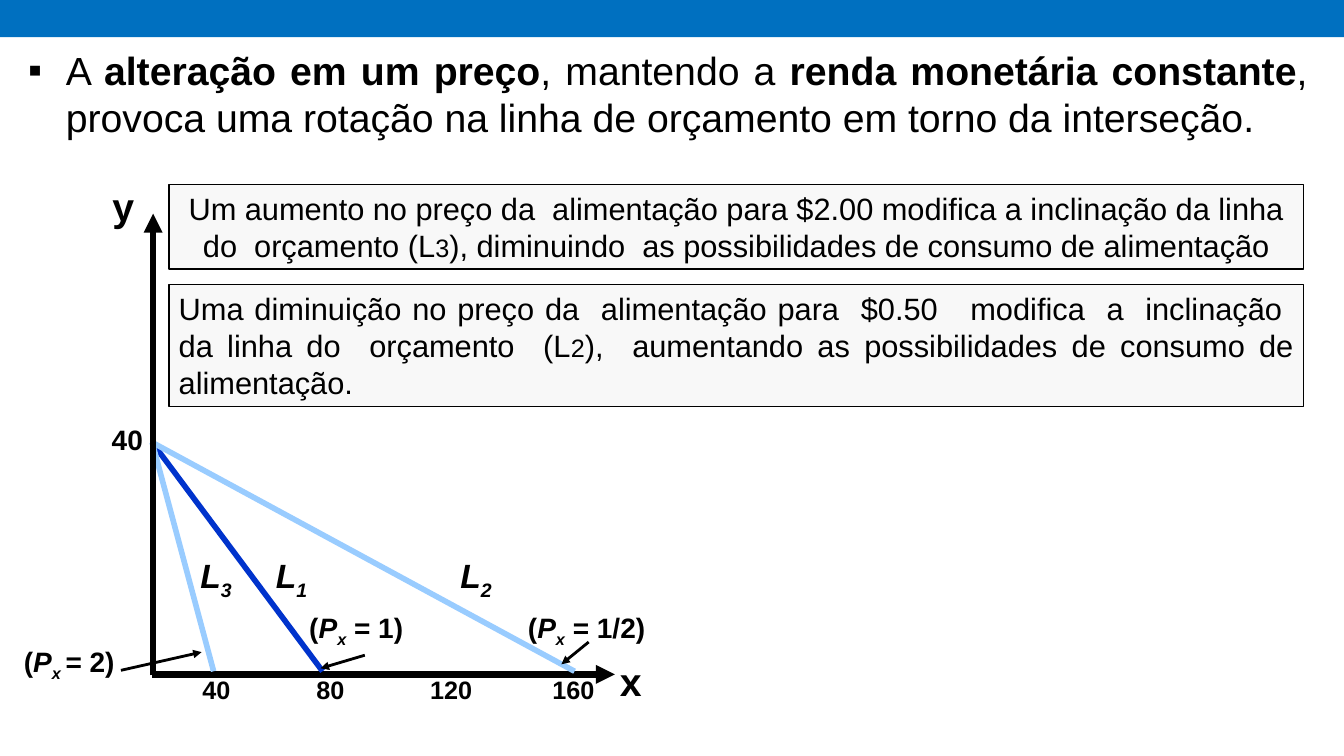
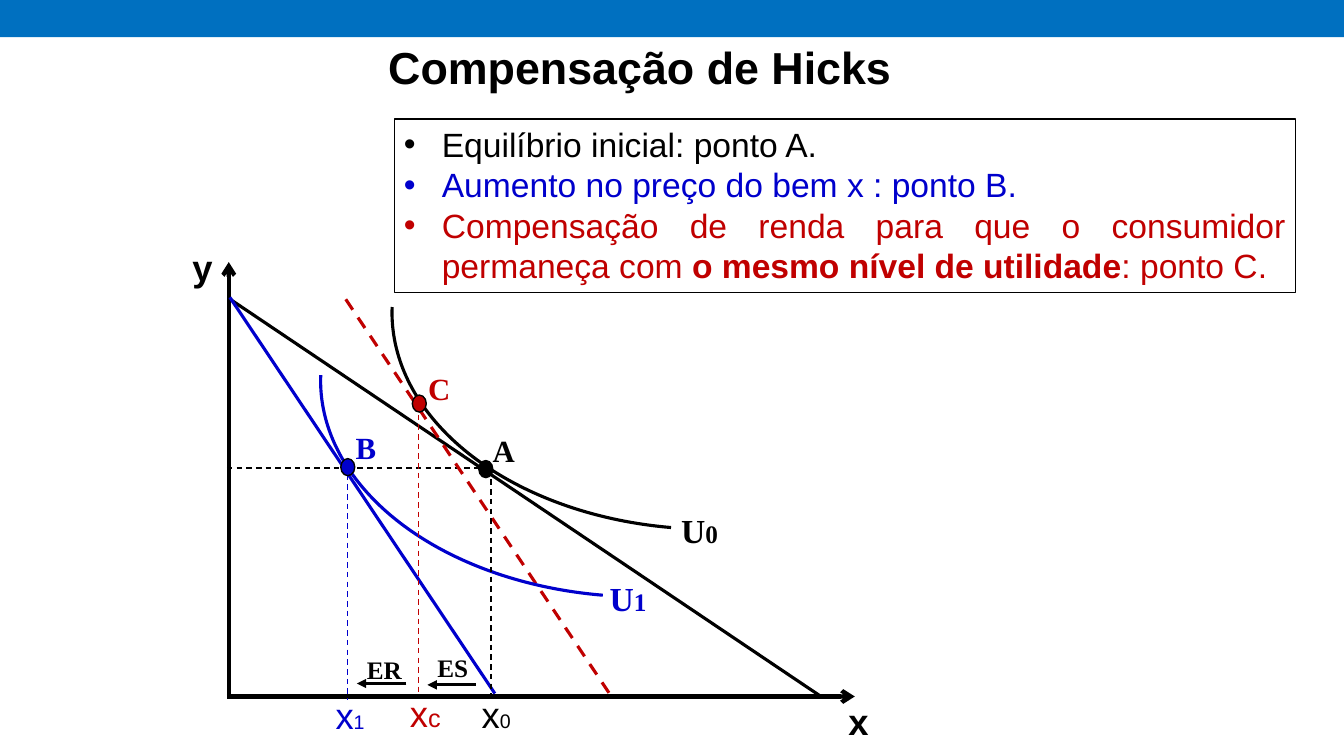
from pptx import Presentation
from pptx.dml.color import RGBColor
from pptx.enum.dml import MSO_LINE
from pptx.enum.shapes import MSO_CONNECTOR, MSO_SHAPE
from pptx.enum.text import MSO_ANCHOR, MSO_AUTO_SIZE, PP_ALIGN
from pptx.oxml.ns import qn
from pptx.util import Pt
from lxml.etree import SubElement


class Theme:
    black, band, panel = "000000", "0070C0", "F8F8F8"
    navy, sky, blue, red = "0033CC", "99CCFF", "0000CC", "C00000"
    sans, serif = "Arial", "Times New Roman"
    title, lead, axis, body, note, price, small, tiny = 32, 28, 26, 24, 22, 20, 18, 14


LEFT, CENTER, RIGHT, JUSTIFY = PP_ALIGN.LEFT, PP_ALIGN.CENTER, PP_ALIGN.RIGHT, PP_ALIGN.JUSTIFY
BOLD = {"bold": True}
SUB = {"italic": True, "baseline": -25000}
SMALL = {"size": Theme.small}

LEAD = ["A ", ("alteração em um preço", BOLD), ", mantendo a ",
        ("renda monetária constante", BOLD),
        ", provoca uma rotação na linha de orçamento em torno da interseção."]

NOTES = [
    (131.8, 60.5, CENTER,
     ["Um aumento no preço da  alimentação para $2.00 modifica a inclinação da linha do  orçamento (L",
      ("3", SMALL), "), diminuindo  as possibilidades de consumo de alimentação"]),
    (203.2, 87, JUSTIFY,
     ["Uma diminuição no preço da  alimentação para  $0.50   modifica  a  inclinação  da linha do  orçamento  (L",
      ("2", SMALL), "),  aumentando as possibilidades de consumo de alimentação."]),
]

BUDGET_LINES = [
    {"number": "1", "price": ["x", " = 1)"], "color": Theme.navy, "foot": 230.4, "name_left": 190,
     "price_box": (213.8, 432.7, 82.8, 31), "pointer": ((260.6, 468), (229, 477.4))},
    {"number": "3", "price": ["x ", "= 2)"], "color": Theme.sky, "foot": 152.6, "name_left": 136,
     "price_box": (10, 456.5, 81.4, 31), "pointer": ((86.4, 478.8), (144, 465.8))},
    {"number": "2", "price": ["x", " = 1/2)"], "color": Theme.sky, "foot": 410.4, "name_left": 321.8,
     "price_box": (370, 432.7, 99.4, 31), "pointer": ((420.5, 458.6), (401, 474.5))},
]
QUANTITIES = [("40", 137.5, 34.6), ("80", 218.9, 34.6), ("120", 300.2, 46), ("160", 387.4, 46)]
INTERCEPT = (108.7, 316)
FOOT_Y = 479.5

HICKS_TITLE = "Compensação de Hicks"
HICKS_STEPS = [
    (Theme.black, ["Equilíbrio inicial: ponto A."]),
    (Theme.blue, ["Aumento no preço do bem x : ponto B."]),
    (Theme.red, ["Compensação de renda para que o consumidor permaneça com ",
                 ("o mesmo nível de utilidade", BOLD), ": ponto C."]),
]
HICKS_BUDGETS = [
    ((163.4, 213.1), (587.5, 498.2), Theme.black, False),
    ((164.2, 212.4), (353.5, 495.4), Theme.blue, False),
    ((247, 213.8), (436.3, 496.8), Theme.red, True),
]
UTILITIES = [
    ("0", Theme.black, (280, 68.4, 455, 309.6), (479.5, 360.7)),
    ("1", Theme.blue, (229, 117.4, 459.4, 308.9), (428.4, 409)),
]
EQUILIBRIA = [
    {"name": "A", "color": Theme.black, "dot": (342, 329), "name_at": (344.9, 304.6),
     "drop": (350.6, 335.5, 495.4), "sub": "0", "sub_size": Theme.tiny, "x_at": (337, 491)},
    {"name": "B", "color": Theme.blue, "dot": (243.4, 327.6), "name_at": (247, 302.4),
     "drop": (248.4, 339, 499.7), "sub": "1", "sub_size": Theme.tiny, "x_at": (232.6, 491.8)},
    {"name": "C", "color": Theme.red, "dot": (294.5, 282.2), "name_at": (298.8, 260.6),
     "drop": (298.8, 282.2, 495.4), "sub": "c", "sub_size": Theme.small, "x_at": (285.8, 490.3)},
]
EFFECTS = [("ES", (305.3, 462.2), (339.8, 305.3), 489.2), ("ER", (254.9, 463.7), (290.2, 254.9), 488.2)]
INITIAL_Y = 334.3


def rgb(color):
    return RGBColor.from_string(color)


def style_run(run, style):
    values = dict(style)
    run.font.color.rgb = rgb(values.pop("color", Theme.black))
    baseline = values.pop("baseline", None)
    if baseline:
        run._r.get_or_add_rPr().set("baseline", str(baseline))
    values["size"] = Pt(values["size"])
    for key, value in values.items():
        setattr(run.font, key, value)


def add_bullet(paragraph, char, color, percent):
    pPr = paragraph._p.get_or_add_pPr()
    pPr.set("marL", str(Pt(27)))
    pPr.set("indent", str(-Pt(27)))
    SubElement(SubElement(pPr, qn("a:buClr")), qn("a:srgbClr")).set("val", color)
    SubElement(pPr, qn("a:buSzPct")).set("val", str(percent * 1000))
    SubElement(pPr, qn("a:buFont")).set("typeface", Theme.sans)
    SubElement(pPr, qn("a:buChar")).set("char", char)


def write(shape, paragraphs, size, font=Theme.sans, align=LEFT, wrap=True, grow=True,
          anchor=MSO_ANCHOR.TOP, bullet=None, percent=100, **style):
    frame = shape.text_frame
    frame_format = {"word_wrap": wrap, "vertical_anchor": anchor,
                    "auto_size": MSO_AUTO_SIZE.SHAPE_TO_FIT_TEXT if grow else MSO_AUTO_SIZE.NONE}
    for key, value in frame_format.items():
        setattr(frame, key, value)
    for index, (color, pieces) in enumerate(paragraphs):
        paragraph = frame.add_paragraph() if index else frame.paragraphs[0]
        if bullet:
            add_bullet(paragraph, bullet, color, percent)
        paragraph.alignment = align
        for piece in pieces:
            text, changes = (piece, {}) if isinstance(piece, str) else piece
            run = paragraph.add_run()
            run.text = text
            style_run(run, {"name": font, "size": size, "color": color, **style, **changes})


def add_text(slide, box, pieces, size, color=Theme.black, **options):
    write(slide.shapes.add_textbox(*map(Pt, box)), [(color, pieces)], size, **options)


def add_figure(slide, kind, box, fill=None, line=None, width=1):
    figure = slide.shapes.add_shape(kind, *map(Pt, box))
    figure.shadow.inherit = False
    if fill:
        figure.fill.solid()
        figure.fill.fore_color.rgb = rgb(fill)
    else:
        figure.fill.background()
    if line:
        figure.line.color.rgb = rgb(line)
        figure.line.width = Pt(width)
    else:
        figure.line.fill.background()
    return figure


def add_line(slide, start, end, color=Theme.black, width=1, dashed=False, arrow=None):
    line = slide.shapes.add_connector(MSO_CONNECTOR.STRAIGHT, *map(Pt, start + end))
    line.line.color.rgb = rgb(color)
    line.line.width = Pt(width)
    if dashed:
        line.line.dash_style = MSO_LINE.DASH
    if arrow:
        SubElement(line.line._get_or_add_ln(), qn("a:tailEnd")).set("type", arrow)
    SubElement(line._element.spPr, qn("a:effectLst"))


def build_rotation(slide):
    add_line(slide, (108.7, 481.7), (439.2, 481.7), width=4.5, arrow="triangle")
    add_text(slide, (435.6, 465.8, 30.2, 41), ["x"], Theme.lead, wrap=False, bold=True)
    add_text(slide, (72.7, 126.7, 30.2, 41), ["y"], Theme.lead, wrap=False, align=RIGHT, bold=True)
    for quantity, left, width in QUANTITIES:
        add_text(slide, (left, 478, width, 28.8), [quantity], Theme.small, wrap=False, bold=True)
    add_text(slide, (72.7, 298, 36.7, 31), ["40"], Theme.price, wrap=False, bold=True)
    for budget in BUDGET_LINES:
        good, amount = budget["price"]
        add_line(slide, INTERCEPT, (budget["foot"], FOOT_Y), budget["color"], 4)
        add_text(slide, (budget["name_left"], 393, 37.4, 36), ["L", (budget["number"], SUB)],
                 Theme.body, wrap=False, bold=True, italic=True)
        add_text(slide, budget["price_box"], ["(", ("P", {"italic": True}), (good, SUB), amount],
                 Theme.price, wrap=False, bold=True)
        add_line(slide, *budget["pointer"], width=2, arrow="triangle")
    for top, height, align, pieces in NOTES:
        note = add_figure(slide, MSO_SHAPE.RECTANGLE, (120.6, top, 810.7, height), Theme.panel, Theme.black)
        write(note, [(Theme.black, pieces)], Theme.note, align=align)
    add_line(slide, (109.4, 482.4), (109.4, 152.6), width=4.5, arrow="triangle")
    add_text(slide, (13, 29.5, 928, 134), LEAD, Theme.lead, align=JUSTIFY, grow=False,
             bullet="▪", percent=101)


def build_hicks(slide):
    for left, right in [(162, 248.4), (248.4, 350.6)]:
        add_line(slide, (left, INITIAL_Y), (right, INITIAL_Y), dashed=True)
    add_line(slide, (163.4, 497.5), (163.4, 187.2), width=3, arrow="arrow")
    add_line(slide, (162, 497.5), (610.6, 497.5), width=3, arrow="arrow")
    for axis, left, top in [("y", 130.3, 171.4), ("x", 599, 496.1)]:
        add_text(slide, (left, top, 41, 38.9), [axis], Theme.axis, bold=True)
    add_text(slide, (177.1, 8.6, 560, 62), [HICKS_TITLE], Theme.title, align=CENTER, grow=False,
             anchor=MSO_ANCHOR.BOTTOM, bold=True)
    for start, end, color, dashed in HICKS_BUDGETS:
        add_line(slide, start, end, color, 2.25, dashed)
    for level, color, box, name_at in UTILITIES:
        curve = add_figure(slide, MSO_SHAPE.ARC, box, line=color, width=2.25)
        curve.adjustments[0], curve.adjustments[1] = 168.24, 0.59
        curve.rotation = 180
        add_text(slide, name_at + (56.9, 36), ["U", (level, SMALL)], Theme.body, color,
                 font=Theme.serif, bold=True)
    for point in EQUILIBRIA:
        color = point["color"]
        x, top, bottom = point["drop"]
        add_line(slide, (x, top), (x, bottom), color, dashed=True)
        add_figure(slide, MSO_SHAPE.OVAL, point["dot"] + (10, 12.2), color, Theme.black)
        add_text(slide, point["name_at"] + (28.8, 33.8), [point["name"]], Theme.note, color,
                 font=Theme.serif, bold=True)
        add_text(slide, point["x_at"] + (41, 38.9), ["x", (point["sub"], {"size": point["sub_size"]})],
                 Theme.axis, color)
    for effect, name_at, (start, end), y in EFFECTS:
        add_line(slide, (start, y), (end, y), width=2.25, arrow="triangle")
        add_text(slide, name_at + (41.8, 28.8), [effect], Theme.small, font=Theme.serif, bold=True)
    steps = add_figure(slide, MSO_SHAPE.RECTANGLE, (281.5, 85, 643.7, 123.8), line=Theme.black, width=0.75)
    write(steps, HICKS_STEPS, Theme.body, align=JUSTIFY, bullet="•")


def main():
    deck = Presentation()
    deck.slide_width, deck.slide_height = Pt(960), Pt(540)
    blank = deck.slide_layouts[6]
    slides = [deck.slides.add_slide(blank) for _ in range(2)]
    band = add_figure(slides[0], MSO_SHAPE.RECTANGLE, (0, -2.2, 960, 28.8), Theme.band)
    blank.shapes._spTree.append(band._element)
    for slide, build in zip(slides, [build_rotation, build_hicks]):
        build(slide)
    deck.save("out.pptx")


if __name__ == "__main__":
    main()
